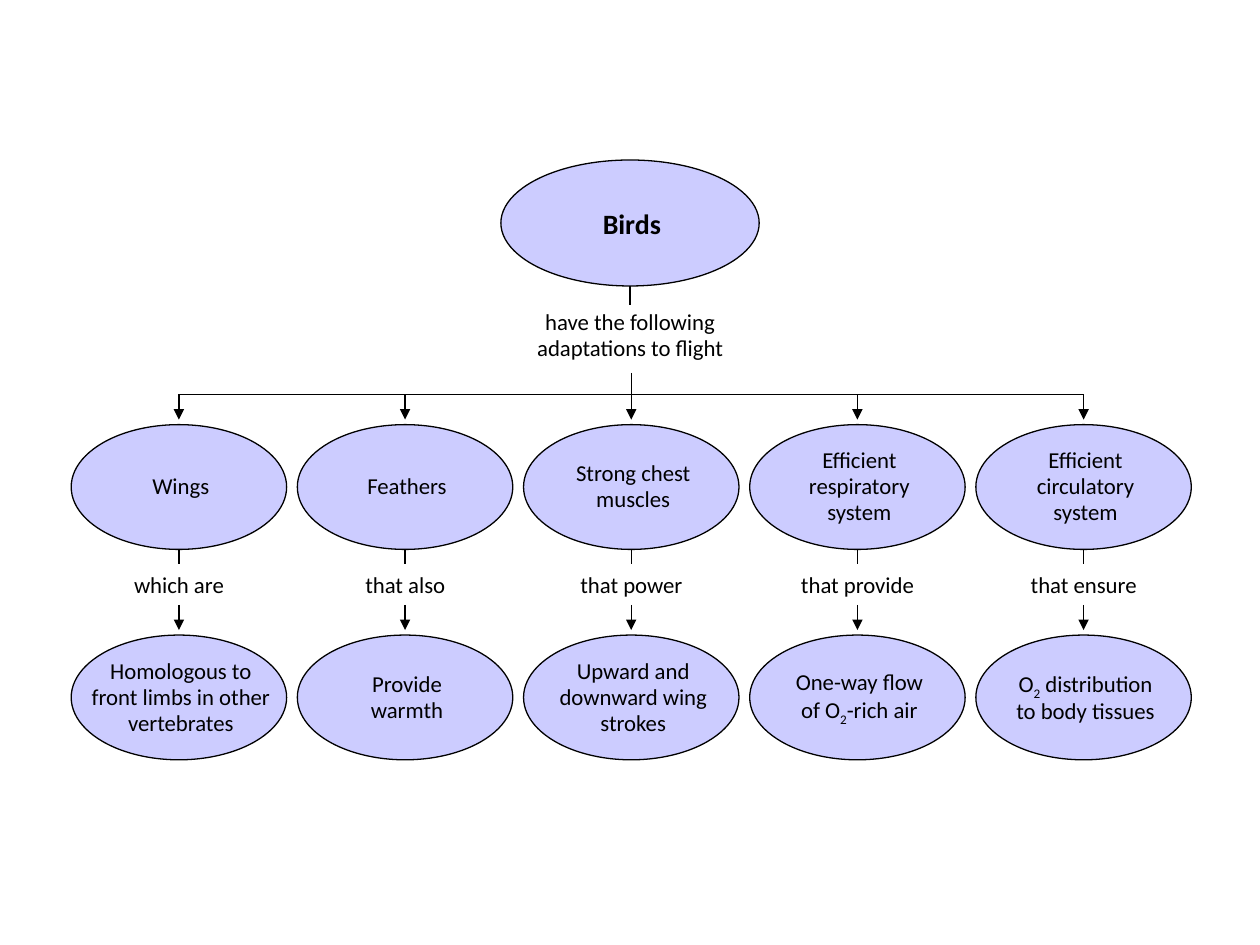
"""Build a concept map of the flight adaptations of birds."""
from lxml import etree
from pptx import Presentation
from pptx.dml.color import RGBColor
from pptx.enum import shapes, text
from pptx.oxml import ns
from pptx.util import Inches, Pt

COLORS = {"oval": "CCCCFF", "ink": "000000"}
INK = RGBColor.from_string(COLORS["ink"])

deck = Presentation()
deck.slide_width, deck.slide_height = Inches(10), Inches(7.5)
page = deck.slides.add_slide(deck.slide_layouts[6])


def draw_line(x1, y1, x2, y2, arrow=False):
    """Draw a thin line, with an arrowhead at its end if asked."""
    line = page.shapes.add_connector(
        shapes.MSO_CONNECTOR.STRAIGHT, Inches(x1), Inches(y1), Inches(x2), Inches(y2))
    line.line.color.rgb = INK
    line.line.width = Pt(0.75)
    if arrow:
        etree.SubElement(line.line._get_or_add_ln(), ns.qn("a:tailEnd"), type="triangle")
    etree.SubElement(line._element.spPr, ns.qn("a:effectLst"))


def add_node(wording, center, top, width, height, oval=True, size=13, bold=False, spacing=0.95):
    """Add a centred oval or label; text between bars is subscript."""
    place = Inches(center - width / 2), Inches(top), Inches(width), Inches(height)
    if oval:
        box = page.shapes.add_shape(shapes.MSO_SHAPE.OVAL, *place)
        box.shadow.inherit = False
        box.fill.solid()
        box.fill.fore_color.rgb = RGBColor.from_string(COLORS["oval"])
        box.line.color.rgb = INK
        box.line.width = Pt(0.75)
    else:
        box = page.shapes.add_textbox(*place)
    frame = box.text_frame
    frame.word_wrap = False
    frame.vertical_anchor = text.MSO_ANCHOR.MIDDLE
    if oval:
        frame.margin_left = Inches(0.03)
        frame.margin_top = frame.margin_right = frame.margin_bottom = 0
    else:
        frame.auto_size = text.MSO_AUTO_SIZE.SHAPE_TO_FIT_TEXT
    para = frame.paragraphs[0]
    para.alignment = text.PP_ALIGN.CENTER
    para.line_spacing = spacing
    para.font.name, para.font.size, para.font.bold = "Calibri", Pt(size), bold
    para.font.color.rgb = INK
    for row, line in enumerate(wording.split("\n")):
        if row:
            para.add_line_break()
        for index, part in enumerate(line.split("|")):
            span = para.add_run()
            span.text = part
            if index % 2:
                span._r.get_or_add_rPr().set("baseline", "-25000")


MIDDLE = 5.01
FIRST, LAST = 1.42, 8.6
OVAL = 1.71, 0.99
BRANCHES = [
    ("Wings", "which are", 0.98, "Homologous to\nfront limbs in other\nvertebrates"),
    ("Feathers", "that also", 0.89, "Provide\nwarmth"),
    ("Strong chest\nmuscles", "that power", 1.05, "Upward and\ndownward wing\nstrokes"),
    ("Efficient\nrespiratory\nsystem", "that provide", 1.15, "One-way flow\nof O|2|-rich air"),
    ("Efficient\ncirculatory\nsystem", "that ensure", 1.11, "O|2| distribution\nto body tissues"),
]

draw_line(5, 1.91, 5, 2.42)
add_node("Birds", 5, 1.27, 2.05, 1, size=16, bold=True, spacing=1.0)
add_node("have the following\nadaptations to flight", 5, 2.41, 1.77, 0.51, oval=False)
draw_line(FIRST, 3.13, LAST, 3.13)
draw_line(MIDDLE, 2.96, MIDDLE, 3.13)

step = (LAST - FIRST) / (len(BRANCHES) - 1)
for column, (trait, link, link_width, result) in enumerate(BRANCHES):
    center = FIRST + column * step
    draw_line(center, 3.13, center, 3.33, arrow=True)
    draw_line(center, 4.28, center, 4.48)
    draw_line(center, 4.8, center, 5, arrow=True)
    add_node(trait, center, 3.37, *OVAL)
    add_node(link, center, 4.49, link_width, 0.31, oval=False)
    add_node(result, center, 5.04, *OVAL)

deck.save("out.pptx")
